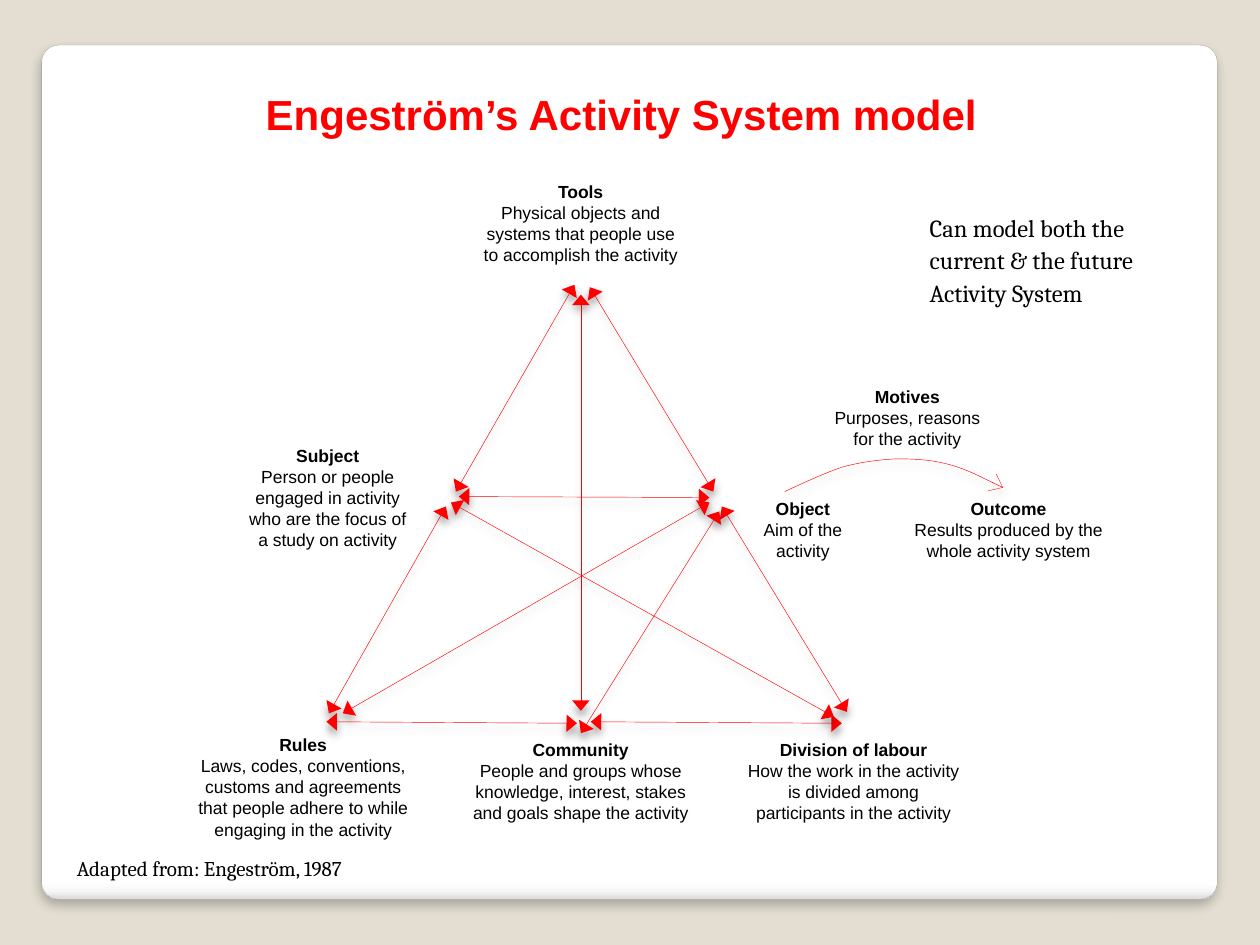
"""Draw Engeström's activity system as a triangle of linked labels."""
from lxml import etree
from pptx import Presentation
from pptx import util as u
from pptx.dml.color import RGBColor
from pptx.enum import shapes, text
from pptx.oxml.ns import qn

RED, BLACK = "FF0000", "000000"
MID = text.PP_ALIGN.CENTER


def hue(code):
    return RGBColor.from_string(code)


def cm(*sizes):
    return [u.Cm(size) for size in sizes]


def add(node, tag, **attrs):
    return etree.SubElement(node, qn("a:" + tag), {key: str(val) for key, val in attrs.items()})


def put(para, words, font="Arial", size=10, bold=False, color=BLACK, align=None, gap=None, rise=0):
    para.alignment = align
    para.line_spacing = gap
    para.space_before = u.Pt(rise)
    run = para.add_run()
    run.text = words
    run.font.name, run.font.size, run.font.bold = font, u.Pt(size), bold
    run.font.color.rgb = hue(color)


class Pen:
    def __init__(self, slide, color=RED, width=0.25):
        self.slide, self.color, self.width = slide, color, width

    def shade(self, shape, alpha=40, blur=5.2, dist=3):
        effects = add(shape._element.spPr, "effectLst")
        shadow = add(effects, "outerShdw", blurRad=u.Pt(blur), dist=u.Pt(dist),
                     dir=90 * 60000, algn="ctr", rotWithShape=0)
        add(add(shadow, "srgbClr", val=BLACK), "alpha", val=alpha * 1000)

    def stroke(self, shape, **ends):
        shape.line.color.rgb = hue(self.color)
        shape.line.width = u.Pt(self.width)
        for end, kind in ends.items():
            add(shape._element.spPr.find(qn("a:ln")), end, type=kind, w="lg", len="med")
        self.shade(shape)

    def panel(self, box, stops):
        panel = self.slide.shapes.add_shape(shapes.MSO_SHAPE.ROUNDED_RECTANGLE, *cm(*box))
        panel.adjustments[0] = 0.02
        panel.fill.gradient()
        panel.fill.gradient_angle = 270
        ramp = next(panel._element.spPr.iter(qn("a:gsLst")))
        for stop in list(ramp):
            ramp.remove(stop)
        for place, color in stops:
            add(add(ramp, "gs", pos=place * 1000), "srgbClr", val=color)
        panel.line.color.rgb = hue("A4A4A4")
        panel.line.width = u.Pt(0.16)
        self.shade(panel, alpha=25, blur=6, dist=4)

    def frame(self, box):
        frame = self.slide.shapes.add_textbox(*cm(*box)).text_frame
        frame.word_wrap = True
        return frame

    def note(self, box, words, **form):
        frame = self.frame(box)
        put(frame.paragraphs[0], words, **form)
        return frame

    def label(self, box, head, body):
        frame = self.note(box, head, bold=True, align=MID)
        put(frame.add_paragraph(), body, align=MID)

    def link(self, start, end):
        line = self.slide.shapes.add_connector(shapes.MSO_CONNECTOR.STRAIGHT, *cm(*start, *end))
        self.stroke(line, headEnd="triangle", tailEnd="triangle")

    def curve(self, start, points):
        build = self.slide.shapes.build_freeform(*cm(*start))
        build.add_line_segments([cm(*point) for point in points], close=False)
        arc = build.convert_to_shape()
        steps = list(arc._element.iter(qn("a:lnTo")))
        for i in range(0, len(steps), 3):
            bend = add(steps[i].getparent(), "cubicBezTo")
            for step in steps[i:i + 3]:
                bend.append(step[0])
                step.getparent().remove(step)
        arc.fill.background()
        self.stroke(arc, tailEnd="arrow")


LABELS = [
    ((4.7, 8.84, 3.81, 2.24), "Subject",
     "Person or people engaged in activity who are the focus of a study on activity"),
    ((9.47, 3.53, 4.47, 1.83), "Tools",
     "Physical objects and systems that people use to accomplish the activity"),
    ((14.71, 9.91, 2.95, 1.55), "Object", "Aim of the activity"),
    ((18.16, 9.91, 4.34, 1.45), "Outcome", "Results produced by the whole activity system"),
    ((14.78, 14.78, 4.85, 1.83), "Division of labour",
     "How the work in the activity is divided among participants in the activity"),
    ((9.19, 14.78, 5.03, 1.83), "Community",
     "People and groups whose knowledge, interest, stakes and goals shape the activity"),
    ((3.71, 14.68, 4.8, 2.39), "Rules",
     "Laws, codes, conventions, customs and agreements that people adhere to "
     "while engaging in the activity"),
    ((16.36, 7.65, 3.86, 1.45), "Motives", "Purposes, reasons for the activity"),
]
LINKS = [
    ((11.58, 5.74), (9.19, 9.91)),
    ((8.99, 10.21), (6.63, 14.38)),
    ((11.89, 5.79), (14.38, 9.91)),
    ((14.55, 10.21), (17.07, 14.35)),
    ((11.91, 14.55), (16.97, 14.58)),
    ((14.5, 10.31), (11.71, 14.78)),
    ((6.58, 14.55), (11.63, 14.58)),
    ((9.25, 10.01), (14.3, 10.03)),
    ((11.71, 5.94), (11.71, 14.33)),
    ((14.3, 10.13), (6.91, 14.38)),
    ((9.09, 10.13), (16.81, 14.45)),
]
ARC = [
    (16.21, 9.73), (16.59, 9.55), (16.97, 9.42),
    (17.32, 9.32), (17.7, 9.27), (18.08, 9.25),
    (18.44, 9.25), (18.8, 9.27), (19.15, 9.37),
    (19.51, 9.47), (20, 9.73), (20.22, 9.83),
]


def main():
    deck = Presentation()
    deck.slide_width, deck.slide_height = cm(25.4, 19.05)
    slide = deck.slides.add_slide(deck.slide_layouts[6])
    slide.background.fill.solid()
    slide.background.fill.fore_color.rgb = hue("E3DED1")
    pen = Pen(slide)
    pen.panel((0.84, 0.91, 23.7, 17.22),
              [(0, "FFFFFF"), (98, "FFFFFF"), (99, "F7F7F7"), (100, "DADADA")])
    for item in LABELS:
        pen.label(*item)
    pen.curve((15.82, 9.91), ARC)
    for ends in LINKS:
        pen.link(*ends)
    title = pen.note((0, 1.04, 25.05, 3.07), "Engeström’s Activity System model",
                     size=24, bold=True, color=RED, align=MID, gap=1.3)
    title.vertical_anchor = text.MSO_ANCHOR.BOTTOM
    title.margin_bottom = u.Cm(1.3)
    pen.note((18.49, 4.11, 5.59, 2.21), "Can model both the current & the future Activity System",
             font="Cambria", size=14, gap=1.1, rise=2.8)
    pen.note((1.3, 17.12, 24.1, 0.76), "Adapted from: Engeström, 1987",
             font="Cambria", size=12, rise=2.4)
    deck.save("out.pptx")


if __name__ == "__main__":
    main()
